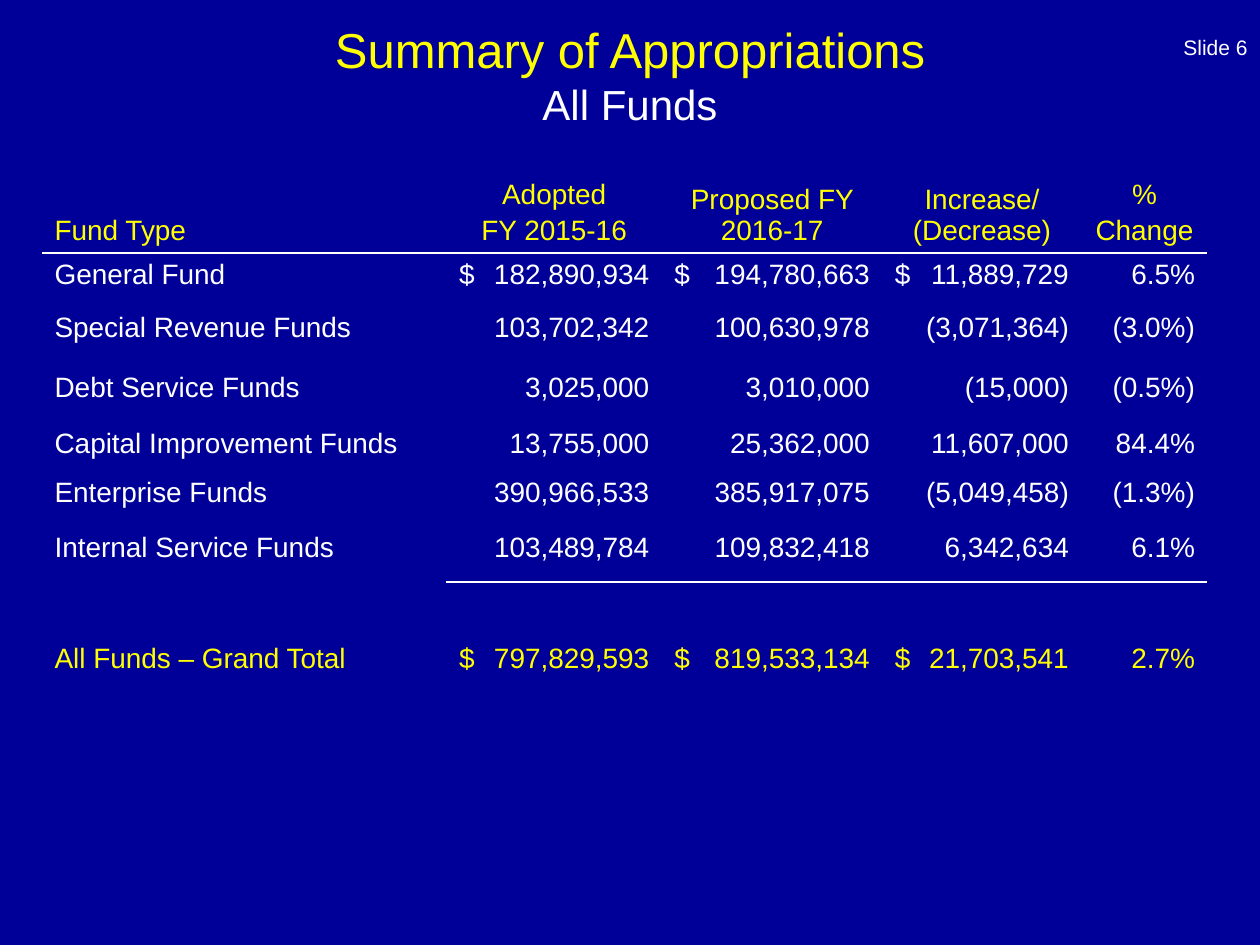
from dataclasses import dataclass

from lxml.etree import SubElement
from pptx import Presentation
from pptx.dml.color import RGBColor
from pptx.enum.text import MSO_ANCHOR, PP_ALIGN
from pptx.oxml.ns import qn
from pptx.util import Inches, Pt

WIDTH, HEIGHT = Inches(10), Inches(7.5)
NAVY, YELLOW, WHITE = "000099", "FFFF00", "FFFFFF"
NO_GRID_STYLE = "{2D5ABB26-0587-4C30-8999-92F81FD0307C}"
COLUMNS = (3.21, 1.71, 1.75, 1.58, 1)
ROWS = (0.64, 0.42, 0.48, 0.44, 0.39, 0.44, 0.44, 0.44, 0.44)
CELL_MARGIN = 0.1


@dataclass
class Area:
    """A rectangle in shares of the slide's width and height."""
    left: float
    top: float
    width: float
    height: float

    def lengths(self):
        return (round(self.left * WIDTH), round(self.top * HEIGHT),
                round(self.width * WIDTH), round(self.height * HEIGHT))


@dataclass
class FundRow:
    """One table row with its colour and the first column it underlines."""
    texts: tuple
    color: str = WHITE
    rule_from: int = len(COLUMNS)
    header: bool = False


FUND_ROWS = (
    FundRow(("Fund Type", "Adopted\nFY 2015-16", "Proposed FY 2016-17",
             "Increase/ (Decrease)", "%\nChange"), YELLOW, 0, True),
    FundRow(("General Fund", "$\t182,890,934", "$\t194,780,663", "$\t11,889,729", "6.5%")),
    FundRow(("Special Revenue Funds", "103,702,342", "100,630,978", "(3,071,364)", "(3.0%)")),
    FundRow(("Debt Service Funds", "3,025,000", "3,010,000", "(15,000)", "(0.5%)")),
    FundRow(("Capital Improvement Funds", "13,755,000", "25,362,000", "11,607,000", "84.4%")),
    FundRow(("Enterprise Funds", "390,966,533", "385,917,075", "(5,049,458)", "(1.3%)")),
    FundRow(("Internal Service Funds", "103,489,784", "109,832,418", "6,342,634", "6.1%"),
            rule_from=1),
    FundRow(("",) * len(COLUMNS)),
    FundRow(("All Funds – Grand Total", "$\t797,829,593", "$\t819,533,134",
             "$\t21,703,541", "2.7%"), YELLOW),
)


def rgb(color: str) -> RGBColor:
    """Turn a hex string into a colour."""
    return RGBColor.from_string(color)


def style_font(font, size: float, color: str) -> None:
    """Set typeface, size and colour."""
    font.name = "Arial"
    font.size = Pt(size)
    font.color.rgb = rgb(color)


def add_text(page, area: Area, text: str, align, anchor, styles: tuple) -> None:
    """Add a text box whose runs take the given size and colour pairs."""
    frame = page.shapes.add_textbox(*area.lengths()).text_frame
    frame.word_wrap = True
    frame.vertical_anchor = anchor
    para = frame.paragraphs[0]
    para.text = text
    para.alignment = align
    for span, (size, color) in zip(para.runs, styles):
        style_font(span.font, size, color)


def underline_cell(cell) -> None:
    """Draw a thin white rule along the bottom of a cell."""
    line = SubElement(cell._tc.get_or_add_tcPr(), qn("a:lnB"), w=str(Pt(1)))
    SubElement(SubElement(line, qn("a:solidFill")), qn("a:srgbClr"), val=WHITE)


def add_right_tab(para, position: float) -> None:
    """Give a paragraph one right-aligned tab stop."""
    stops = SubElement(para._p.get_or_add_pPr(), qn("a:tabLst"))
    SubElement(stops, qn("a:tab"), pos=str(Inches(position)), algn="r")


def fill_cell(cell, row: FundRow, column: int) -> None:
    """Write and format one cell."""
    frame = cell.text_frame
    frame.text = row.texts[column]
    for index, para in enumerate(frame.paragraphs):
        if "\t" in para.text:
            para.alignment = PP_ALIGN.LEFT
            add_right_tab(para, COLUMNS[column] - 2 * CELL_MARGIN)
        elif column:
            para.alignment = PP_ALIGN.CENTER if row.header else PP_ALIGN.RIGHT
        if index:
            para.space_before = Pt(3)
        style_font(para.font, 16, row.color)
        for span in para.runs:
            style_font(span.font, 16, row.color)
    cell.vertical_anchor = MSO_ANCHOR.BOTTOM if row.header else MSO_ANCHOR.TOP
    if column >= row.rule_from:
        underline_cell(cell)
    cell.fill.background()


def add_fund_table(page, area: Area) -> None:
    """Add the table of appropriations by fund."""
    table = page.shapes.add_table(len(ROWS), len(COLUMNS), *area.lengths()).table
    table.first_row = table.horz_banding = False
    table._tbl.tblPr.find(qn("a:tableStyleId")).text = NO_GRID_STYLE
    for column, width in zip(table.columns, COLUMNS):
        column.width = Inches(width)
    for line, height, row in zip(table.rows, ROWS, FUND_ROWS):
        line.height = Inches(height)
        for index, cell in enumerate(line.cells):
            fill_cell(cell, row, index)


def main() -> None:
    """Build the slide and save it."""
    deck = Presentation()
    deck.slide_width, deck.slide_height = WIDTH, HEIGHT
    page = deck.slides.add_slide(deck.slide_layouts[6])
    page.background.fill.solid()
    page.background.fill.fore_color.rgb = rgb(NAVY)
    add_text(page, Area(0.77, 0, 0.23, 0.07), "Slide 6", PP_ALIGN.RIGHT,
             MSO_ANCHOR.BOTTOM, ((12, WHITE),))
    add_text(page, Area(1 / 30, 1 / 30, 28 / 30, 0.09),
             "Summary of Appropriations\vAll Funds", PP_ALIGN.CENTER,
             MSO_ANCHOR.MIDDLE, ((28, YELLOW), (24, WHITE)))
    add_fund_table(page, Area(1 / 30, 8 / 45, sum(COLUMNS) / 10, sum(ROWS) / 7.5))
    deck.save("out.pptx")


if __name__ == "__main__":
    main()
